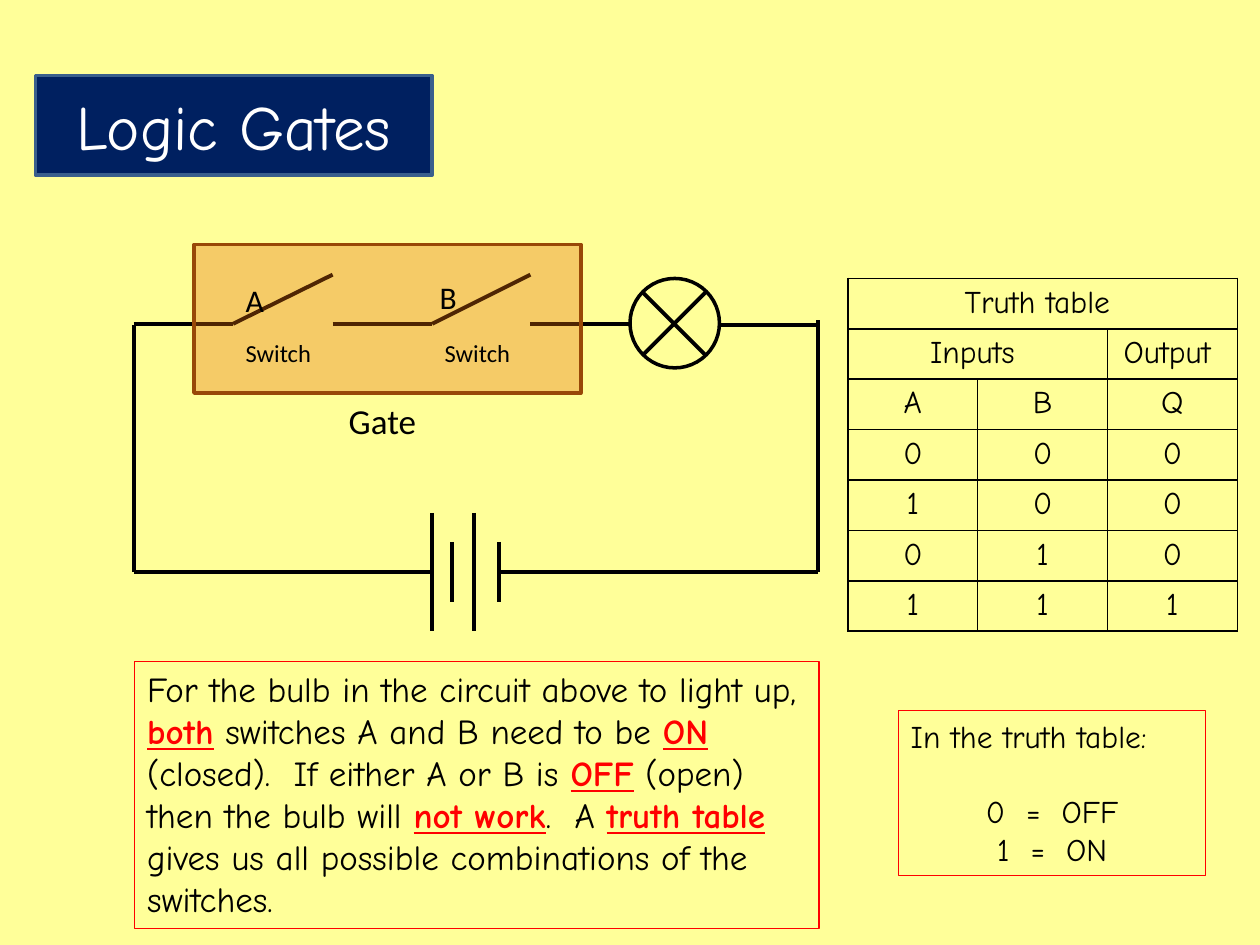
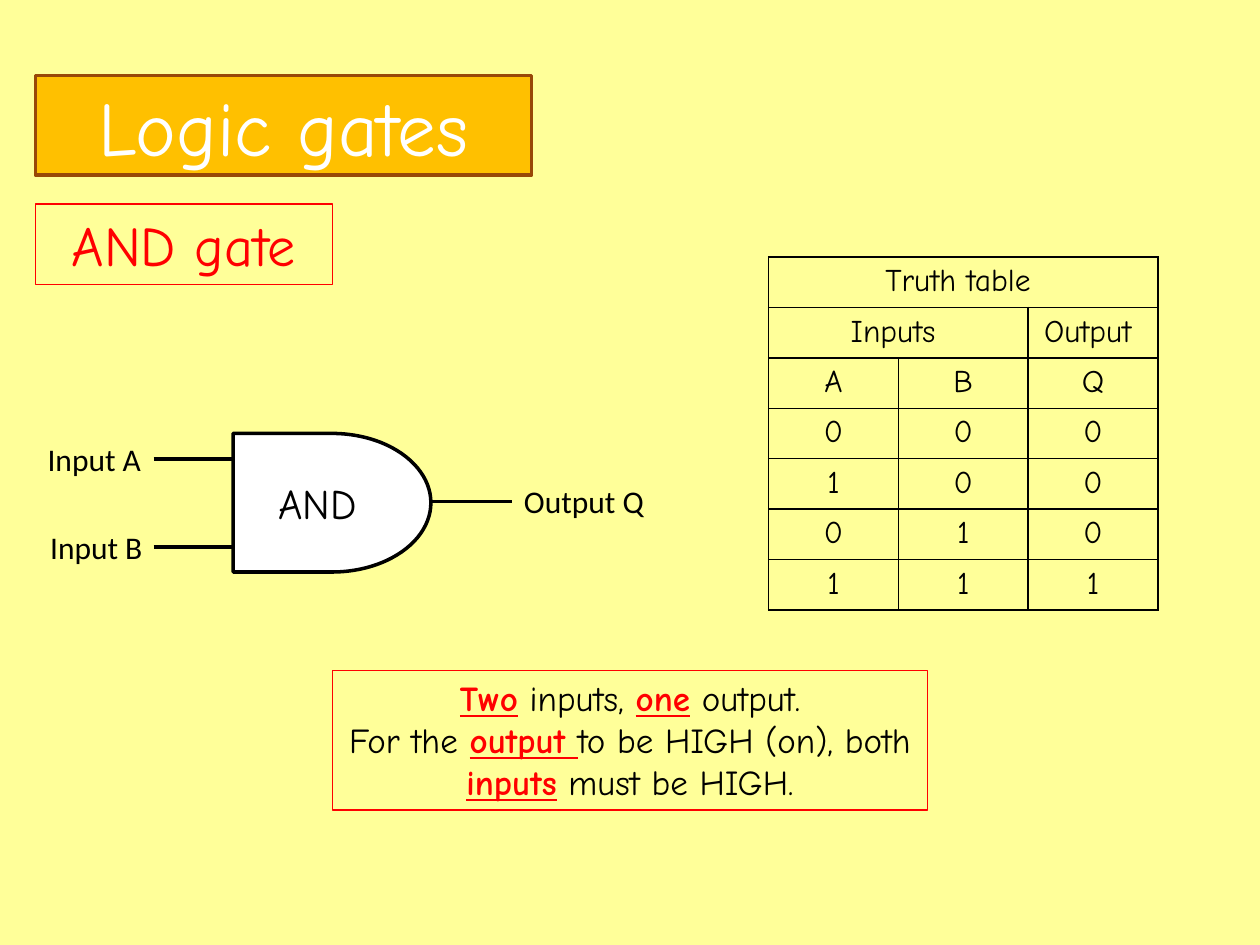
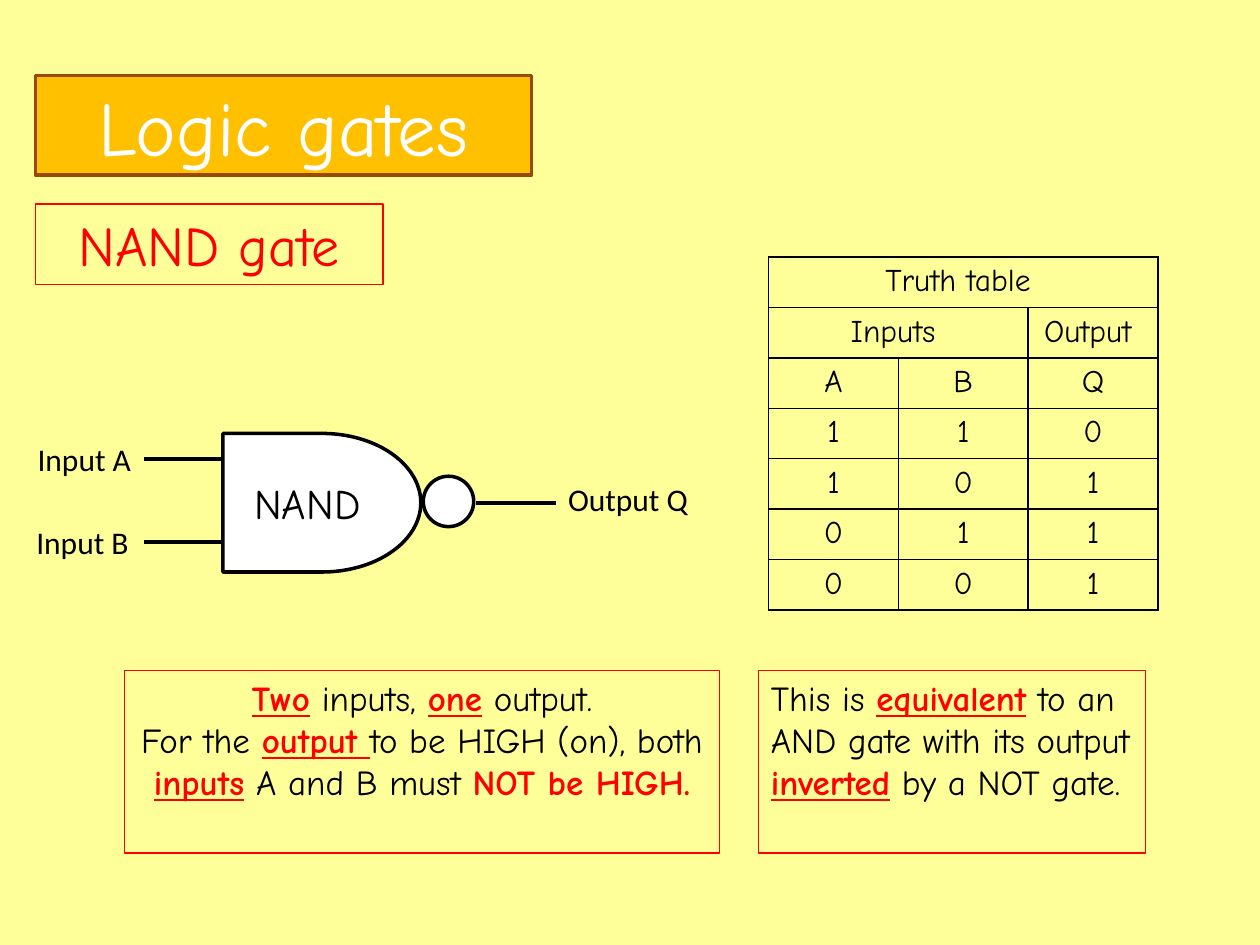
from dataclasses import dataclass
from typing import NamedTuple

from lxml.etree import SubElement
from pptx import Presentation
from pptx.dml.color import RGBColor
from pptx.enum.shapes import MSO_CONNECTOR as Link, MSO_SHAPE as Form
from pptx.enum.text import MSO_ANCHOR as Anchor, MSO_AUTO_SIZE as Auto, PP_ALIGN as Align
from pptx.oxml.ns import qn
from pptx.util import Inches, Pt

# Shared look
PAPER, BLACK, WHITE, RED = "FFFF99", "000000", "FFFFFF", "FF0000"
NAVY, STEEL, AMBER, BROWN, ORANGE = "002060", "3A5F8C", "FFC000", "984807", "E46C0A"
COMIC, PLAIN = "Comic Neue", "Calibri"
WIRE, STUB = 2.25, 0.63


class Box(NamedTuple):
    left: float
    top: float
    width: float
    height: float

    def lengths(self) -> list:
        return [Inches(n) for n in self]


class Wire(NamedTuple):
    x1: float
    y1: float
    x2: float
    y2: float


class Note(NamedTuple):
    box: Box
    text: str
    align: Align = Align.LEFT
    size: int = 20


class Label(NamedTuple):
    box: Box
    text: str
    size: int = 18
    align: Align = Align.LEFT


@dataclass
class Gate:
    name: str
    head: float      # width of the heading box
    left: float      # left edge of the gate symbol
    b_left: float    # left edge of the "Input B" label
    b_wire: float    # height of the second input wire
    out: tuple       # start of the output wire
    out_top: float   # top of the output label
    rows: list
    notes: list
    bubble: bool = False


def rgb(code: str) -> RGBColor:
    return RGBColor.from_string(code)


def say(frame, text: str, size: float = 18, font: str = COMIC, color: str = BLACK,
        align: Align = Align.LEFT, anchor: Anchor = Anchor.TOP, wrap: bool = True) -> None:
    """Write paragraphs; *word* is bold red underlined, *~word* is bold red only."""
    frame.word_wrap, frame.auto_size, frame.vertical_anchor = wrap, Auto.NONE, anchor
    for i, line in enumerate(text.split("\n")):
        para = frame.paragraphs[0] if i == 0 else frame.add_paragraph()
        para.alignment = align
        for j, part in enumerate(line.split("*")):
            if not part:
                continue
            hot = j % 2 == 1
            run = para.add_run()
            run.text = part.lstrip("~")
            run.font.size, run.font.name = Pt(size), font
            run.font.color.rgb = rgb(RED if hot else color)
            if hot:
                run.font.bold = True
                run.font.underline = not part.startswith("~")


def paint(shape, fill: str | None, edge: str, width: float) -> None:
    if fill:
        shape.fill.solid()
        shape.fill.fore_color.rgb = rgb(fill)
    else:
        shape.fill.background()
    shape.line.color.rgb = rgb(edge)
    shape.line.width = Pt(width)


def draw(slide, form: Form, box: Box, fill: str | None = None,
         edge: str = BLACK, width: float = 2):
    shape = slide.shapes.add_shape(form, *box.lengths())
    shape.shadow.inherit = False
    paint(shape, fill, edge, width)
    return shape


def join(slide, wire: Wire) -> None:
    line = slide.shapes.add_connector(Link.STRAIGHT, *map(Inches, wire))
    line.line.color.rgb = rgb(BLACK)
    line.line.width = Pt(WIRE)
    SubElement(line._element.spPr, qn("a:effectLst"))


def label(slide, item: Label) -> None:
    frame = slide.shapes.add_textbox(*item.box.lengths()).text_frame
    say(frame, item.text, size=item.size, font=PLAIN, align=item.align, wrap=False)


def note(slide, item: Note, color: str = BLACK):
    shape = draw(slide, Form.RECTANGLE, item.box, edge=RED, width=0.75)
    say(shape.text_frame, item.text, size=item.size, align=item.align, color=color)
    return shape.text_frame


def start(prs, text: str, width: float, size: int, fill: str, edge: str):
    """Add a slide whose title sits in a rounded band."""
    slide = prs.slides.add_slide(prs.slide_layouts[5])
    title = slide.shapes.title
    title.left, title.top, title.width, title.height = Box(0.28, 0.6, width, 0.79).lengths()
    geom = SubElement(title._element.spPr, qn("a:prstGeom"), prst="roundRect")
    SubElement(geom, qn("a:avLst"))
    paint(title, fill, edge, 2)
    say(title.text_frame, text, size=size, color=WHITE, align=Align.CENTER,
        anchor=Anchor.MIDDLE)
    return slide


def border(cell) -> None:
    props = cell._tc.get_or_add_tcPr()
    for side in ("lnL", "lnR", "lnT", "lnB"):
        line = SubElement(props, qn(f"a:{side}"), w=str(Pt(1)))
        fill = SubElement(line, qn("a:solidFill"))
        SubElement(fill, qn("a:srgbClr"), val=BLACK)


def truth(slide, left: float, top: float, rows: list) -> None:
    """Truth table: each row is a string of the digits A, B and Q."""
    grid = [("Truth table ", "", ""), ("Inputs ", "", "Output "), "ABQ", *rows]
    box = Box(left, top, 3.09, 0.4 * len(grid))
    table = slide.shapes.add_table(len(grid), 3, *box.lengths()).table
    table.first_row = table.horz_banding = False
    for r, row in enumerate(grid):
        for c, text in enumerate(row):
            cell = table.cell(r, c)
            border(cell)
            cell.fill.background()
            if text:
                say(cell.text_frame, text, align=Align.CENTER)
    table.cell(0, 0).merge(table.cell(0, 2))
    table.cell(1, 0).merge(table.cell(1, 1))


# Circuit slide
CIRCUIT = [
    # top row and open switches
    Wire(1.06, 2.57, 1.85, 2.57), Wire(2.64, 2.57, 3.43, 2.57),
    Wire(4.21, 2.57, 5, 2.57), Wire(5.71, 2.58, 6.5, 2.58),
    Wire(1.85, 2.57, 2.64, 2.18), Wire(3.43, 2.57, 4.21, 2.18),
    # cross in the bulb
    Wire(5.1, 2.82, 5.6, 2.32), Wire(5.6, 2.82, 5.1, 2.32),
    # sides and bottom
    Wire(1.06, 2.58, 1.06, 4.54), Wire(6.49, 2.54, 6.49, 4.54),
    Wire(3.43, 4.54, 1.06, 4.54), Wire(6.49, 4.54, 3.96, 4.54),
    # battery plates
    *(Wire(x, 4.54 - half, x, 4.54 + half)
      for x, half in ((3.43, 0.47), (3.59, 0.24), (3.76, 0.47), (3.96, 0.24))),
]
NAMES = [
    Label(Box(1.85, 2.18, 0.39, 0.4), "A"),
    Label(Box(3.39, 2.16, 0.39, 0.4), "B"),
    Label(Box(1.85, 2.63, 0.79, 0.35), "Switch", 14),
    Label(Box(3.43, 2.63, 0.79, 0.35), "Switch", 14),
    Label(Box(2.64, 3.12, 0.79, 0.44), "Gate", 20, Align.CENTER),
]
BULB = Note(Box(1.07, 5.25, 5.43, 2.12),
            "For the bulb in the circuit above to light up, *both* switches A and B "
            "need to be *ON* (closed).  If either A or B is *OFF* (open) then the bulb "
            "will *not work*.  A *truth table *gives us all possible combinations of "
            "the switches.")
KEY = Note(Box(7.13, 5.64, 2.44, 1.31), "In the truth table:\n0  =  OFF\n1  =  ON", size=18)
AND_ROWS = ["000", "100", "010", "111"]


def circuit(prs) -> None:
    slide = start(prs, "Logic Gates", 3.15, 36, NAVY, STEEL)
    draw(slide, Form.OVAL, Box(5, 2.21, 0.71, 0.71))
    for wire in CIRCUIT:
        join(slide, wire)
    cover = draw(slide, Form.RECTANGLE, Box(1.54, 1.94, 3.07, 1.18), ORANGE, BROWN)
    tint = cover._element.spPr.find(f"{qn('a:solidFill')}/{qn('a:srgbClr')}")
    SubElement(tint, qn("a:alpha"), val="35000")
    for item in NAMES:
        label(slide, item)
    note(slide, BULB)
    truth(slide, 6.73, 2.21, AND_ROWS)
    codes = note(slide, KEY).paragraphs[1:]
    for para in codes:
        para.alignment = Align.CENTER
    codes[0].space_before = Pt(21.6)


# Gate slides
INTRO = "*Two* inputs, *one* output.\nFor the *output *to be HIGH (on), both *inputs*"
GATES = [
    Gate("AND", 2.36, 1.85, 0.3, 4.34, (3.43, 3.98), 3.78, AND_ROWS,
         [Note(Box(2.64, 5.32, 4.72, 1.11), INTRO + " must be HIGH.", Align.CENTER)]),
    Gate("NAND", 2.76, 1.77, 0.19, 4.3, (3.78, 3.99), 3.76, ["110", "101", "011", "001"],
         [Note(Box(0.99, 5.32, 4.72, 1.45), INTRO + " A and B must *~NOT be HIGH.*",
               Align.CENTER),
          Note(Box(6.02, 5.32, 3.07, 1.45),
               "This is *equivalent* to an AND gate with its output *inverted* "
               "by a NOT gate.")],
         bubble=True),
]


def symbol(slide, gate: Gate) -> None:
    if gate.bubble:
        draw(slide, Form.OVAL, Box(3.36, 3.78, 0.4, 0.4), WHITE)
    body = draw(slide, Form.FLOWCHART_DELAY, Box(gate.left, 3.44, 1.57, 1.1), WHITE)
    say(body.text_frame, gate.name, size=24, align=Align.CENTER, anchor=Anchor.MIDDLE)
    x, y = gate.out
    for left, top in ((gate.left - STUB, 3.64), (gate.left - STUB, gate.b_wire), (x, y)):
        join(slide, Wire(left, top, left + STUB, top))
    label(slide, Label(Box(gate.left - 1.57, 3.44, 0.94, 0.4), "Input A"))
    label(slide, Label(Box(gate.b_left, gate.b_wire - 0.2, 0.94, 0.4), "Input B"))
    label(slide, Label(Box(x + STUB, gate.out_top, 1.18, 0.4), "Output Q"))


def lesson(prs, gate: Gate) -> None:
    slide = start(prs, "Logic gates", 3.94, 44, AMBER, BROWN)
    head = Note(Box(0.28, 1.62, gate.head, 0.64), f"{gate.name} gate", Align.CENTER, 32)
    note(slide, head, color=RED)
    symbol(slide, gate)
    truth(slide, 6.1, 2.04, gate.rows)
    for item in gate.notes:
        note(slide, item)


def main() -> None:
    prs = Presentation()
    prs.slide_width, prs.slide_height = Inches(10), Inches(7.5)
    back = prs.slide_master.background.fill
    back.solid()
    back.fore_color.rgb = rgb(PAPER)
    circuit(prs)
    for gate in GATES:
        lesson(prs, gate)
    prs.save("out.pptx")


if __name__ == "__main__":
    main()
